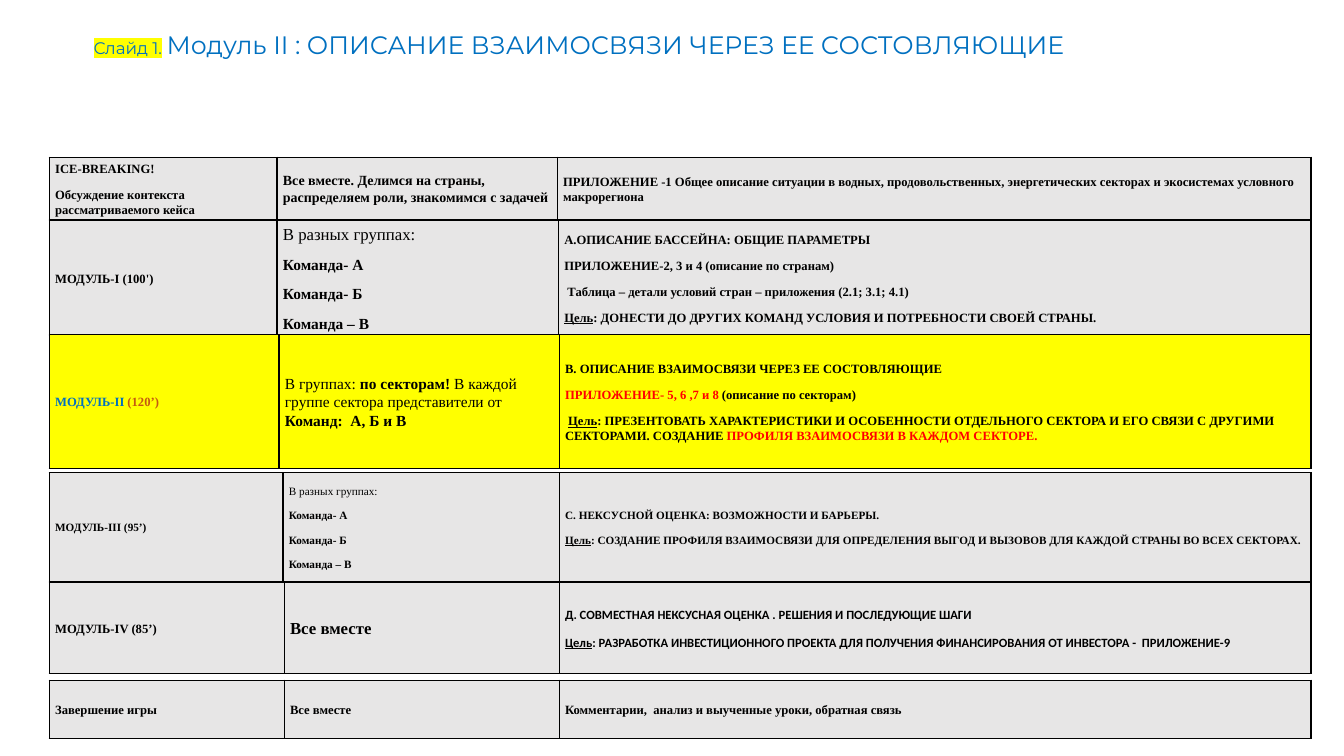
from lxml import etree
from pptx import Presentation
from pptx.dml.color import RGBColor
from pptx.enum.text import MSO_ANCHOR
from pptx.oxml.ns import qn
from pptx.util import Cm, Pt

MIDDLE = MSO_ANCHOR.MIDDLE
BLACK = RGBColor(0x00, 0x00, 0x00)
GREY = RGBColor(0xE7, 0xE6, 0xE6)
YELLOW = RGBColor(0xFF, 0xFF, 0x00)
BLUE = RGBColor(0x00, 0x70, 0xC0)
RED = RGBColor(0xFF, 0x00, 0x00)
ORANGE = RGBColor(0xC4, 0x59, 0x11)

PLAIN = {"bold": False}
GOAL = ("Цель", {"underline": True})
TEAMS = ["Команда- А", "Команда- Б", "Команда – В"]
LEFT, TABLE_WIDTH = 1.24, 31.8


def write_runs(paragraph, pieces, **defaults):
    """Add text pieces; a piece is a string or (text, formats that differ)."""
    for piece in [pieces] if isinstance(pieces, str) else pieces:
        text, changes = (piece, {}) if isinstance(piece, str) else piece
        look = {"font": "Times New Roman", "color": BLACK, "bold": True, **defaults, **changes}
        run = paragraph.add_run()
        run.text = text
        run.font.name = look["font"]
        run.font.size = Pt(look["size"])
        run.font.bold = look["bold"]
        run.font.underline = look.get("underline", False)
        run.font.color.rgb = look["color"]
        if "highlight" in look:
            highlight = etree.Element(qn("a:highlight"))
            etree.SubElement(highlight, qn("a:srgbClr"), val=str(look["highlight"]))
            run.font.fill  # the highlight belongs right after the text fill
            run.font._rPr.find(qn("a:solidFill")).addnext(highlight)


def draw_borders(cell):
    properties = cell._tc.get_or_add_tcPr()
    for side in ("lnL", "lnR", "lnT", "lnB"):
        line = etree.SubElement(properties, qn("a:" + side), w=str(Pt(1)))
        fill = etree.SubElement(line, qn("a:solidFill"))
        etree.SubElement(fill, qn("a:srgbClr"), val=str(BLACK))


# Each stage: top, height, widths of the first two columns, fill,
# then per cell the text size and its paragraphs
stages = [
    (3.96, 1.57, 5.74, 7.06, GREY, [
        (9, ["ICE-BREAKING!", "Обсуждение контекста рассматриваемого кейса"]),
        (10, ["Все вместе. Делимся на страны, распределяем роли, знакомимся с задачей"]),
        (9, ["ПРИЛОЖЕНИЕ -1 Общее описание ситуации в водных, продовольственных, "
             "энергетических секторах и экосистемах условного макрорегиона"]),
    ]),
    (5.56, 2.79, 5.74, 7.09, GREY, [
        (9, ["МОДУЛЬ-I (100')"]),
        (11, [[("В разных группах:", {"bold": False, "size": 12})], *TEAMS]),
        (9, ["А.ОПИСАНИЕ БАССЕЙНА: ОБЩИЕ ПАРАМЕТРЫ",
             "ПРИЛОЖЕНИЕ-2, 3 и 4 (описание по странам)",
             " Таблица – детали условий стран – приложения (2.1; 3.1; 4.1)",
             [GOAL, ": ДОНЕСТИ ДО ДРУГИХ КОМАНД УСЛОВИЯ И ПОТРЕБНОСТИ СВОЕЙ СТРАНЫ."]]),
    ]),
    (8.43, 3.38, 5.79, 7.06, YELLOW, [
        (9, [[("МОДУЛЬ-II ", {"color": BLUE, "highlight": YELLOW}),
              ("(120’)", {"color": ORANGE, "highlight": YELLOW})]]),
        (11, [[("В группах: ", PLAIN), "по секторам! ",
               ("В каждой группе сектора представители от", PLAIN), " Команд:  А, Б и В"]]),
        (9, ["В. ОПИСАНИЕ ВЗАИМОСВЯЗИ ЧЕРЕЗ ЕЕ СОСТОВЛЯЮЩИЕ",
             [("ПРИЛОЖЕНИЕ- 5, 6 ,7 и 8 ", {"color": RED}), "(описание по секторам)"],
             [" ", GOAL,
              ": ПРЕЗЕНТОВАТЬ ХАРАКТЕРИСТИКИ И ОСОБЕННОСТИ ОТДЕЛЬНОГО СЕКТОРА "
              "И ЕГО СВЯЗИ С ДРУГИМИ СЕКТОРАМИ. СОЗДАНИЕ ",
              ("ПРОФИЛЯ ВЗАИМОСВЯЗИ В КАЖДОМ СЕКТОРЕ.", {"color": RED})]]),
    ]),
    (11.91, 2.74, 5.89, 6.96, GREY, [
        (8, ["МОДУЛЬ-III (95’)"]),
        (8, [[("В разных группах:", PLAIN)], *TEAMS]),
        (8, ["С. НЕКСУСНОЙ ОЦЕНКА: ВОЗМОЖНОСТИ И БАРЬЕРЫ.",
             [GOAL, ": СОЗДАНИЕ ПРОФИЛЯ ВЗАИМОСВЯЗИ ДЛЯ ОПРЕДЕЛЕНИЯ ВЫГОД И ВЫЗОВОВ "
                    "ДЛЯ КАЖДОЙ СТРАНЫ ВО ВСЕХ СЕКТОРАХ."]]),
    ]),
    (14.68, 2.29, 5.92, 6.93, GREY, [
        (9, ["МОДУЛЬ-IV (85’)"]),
        (12, ["Все вместе"]),
        (9, [[("Д. СОВМЕСТНАЯ НЕКСУСНАЯ ОЦЕНКА . РЕШЕНИЯ И ПОСЛЕДУЮЩИЕ ШАГИ",
               {"font": "Calibri"})],
             [("Цель", {"font": "Calibri", "underline": True}),
              (": РАЗРАБОТКА ИНВЕСТИЦИОННОГО ПРОЕКТА ДЛЯ ПОЛУЧЕНИЯ ФИНАНСИРОВАНИЯ "
               "ОТ ИНВЕСТОРА -  ПРИЛОЖЕНИЕ-9", {"font": "Calibri"})]]),
    ]),
    (17.14, 1.47, 5.92, 6.93, GREY, [
        (9, ["Завершение игры"]),
        (9, ["Все вместе"]),
        (9, ["Комментарии,  анализ и выученные уроки, обратная связь"]),
    ]),
]

presentation = Presentation()
presentation.slide_width, presentation.slide_height = Cm(33.87), Cm(19.05)
slide = presentation.slides.add_slide(presentation.slide_layouts[6])

heading = slide.shapes.add_textbox(Cm(2.11), Cm(0.08), Cm(30.43), Cm(2.16)).text_frame
heading.word_wrap = True
heading.vertical_anchor = MIDDLE
heading.paragraphs[0].line_spacing = 0.9
write_runs(heading.paragraphs[0],
           [("Слайд 1.", {"highlight": YELLOW}), " ",
            ("Модуль II : ОПИСАНИЕ ВЗАИМОСВЯЗИ ЧЕРЕЗ ЕЕ СОСТОВЛЯЮЩИЕ", {"size": 18})],
           font="Montserrat", size=12, bold=False, color=BLUE)

for top, height, stage_width, group_width, fill, contents in stages:
    table = slide.shapes.add_table(
        1, 3, Cm(LEFT), Cm(top), Cm(TABLE_WIDTH), Cm(height)).table
    table.first_row = table.horz_banding = False
    widths = (stage_width, group_width, TABLE_WIDTH - stage_width - group_width)
    for column, width in zip(table.columns, widths):
        column.width = Cm(width)
    for cell, (size, paragraphs) in zip(table.rows[0].cells, contents):
        draw_borders(cell)
        cell.fill.solid()
        cell.fill.fore_color.rgb = fill
        cell.vertical_anchor = MIDDLE
        cell.margin_left = cell.margin_right = Cm(0.15)
        cell.margin_top, cell.margin_bottom = Cm(0.03), 0
        for index, pieces in enumerate(paragraphs):
            frame = cell.text_frame
            paragraph = frame.add_paragraph() if index else frame.paragraphs[0]
            paragraph.line_spacing = 1.06
            paragraph.space_after = Pt(8)
            write_runs(paragraph, pieces, size=size)

presentation.save("out.pptx")
